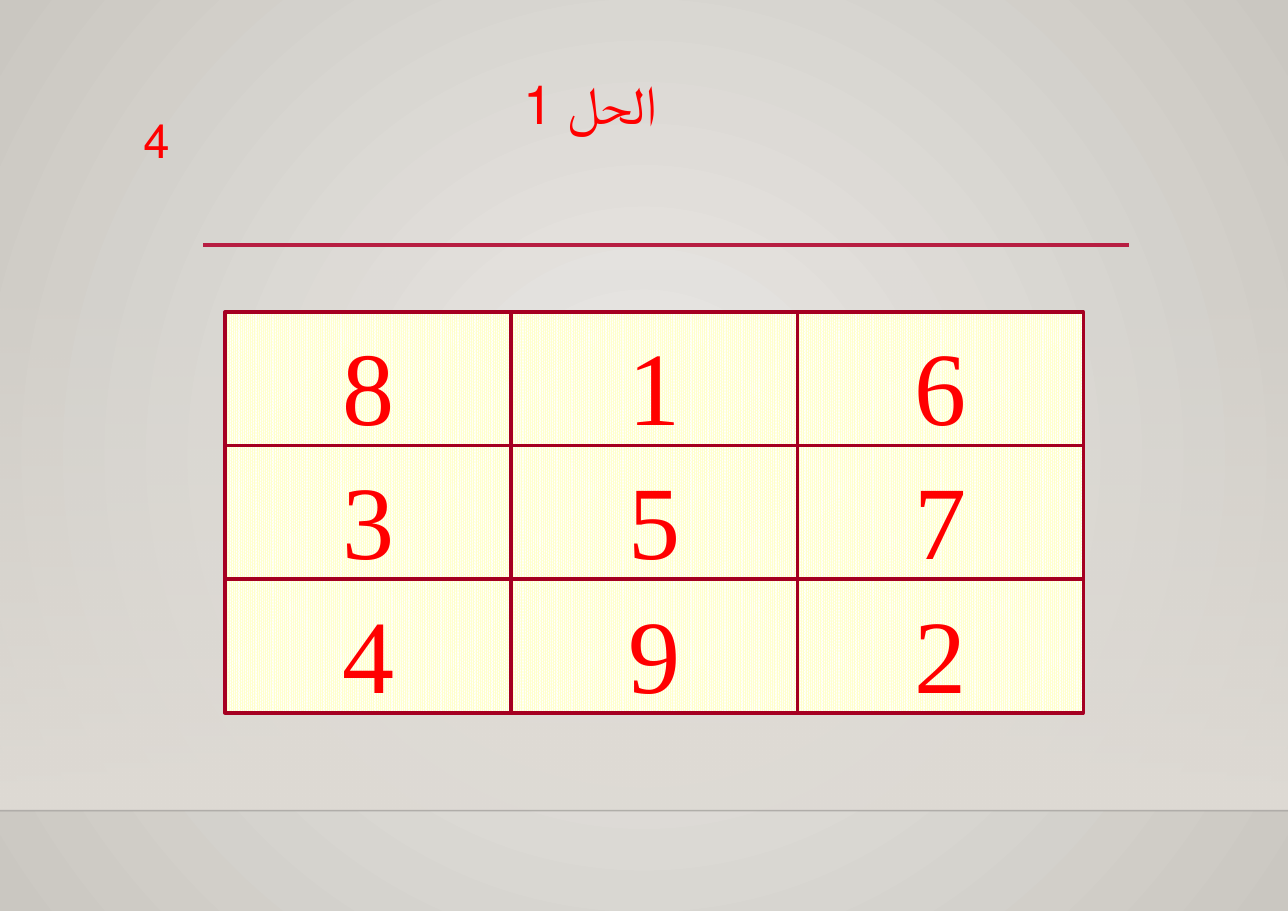
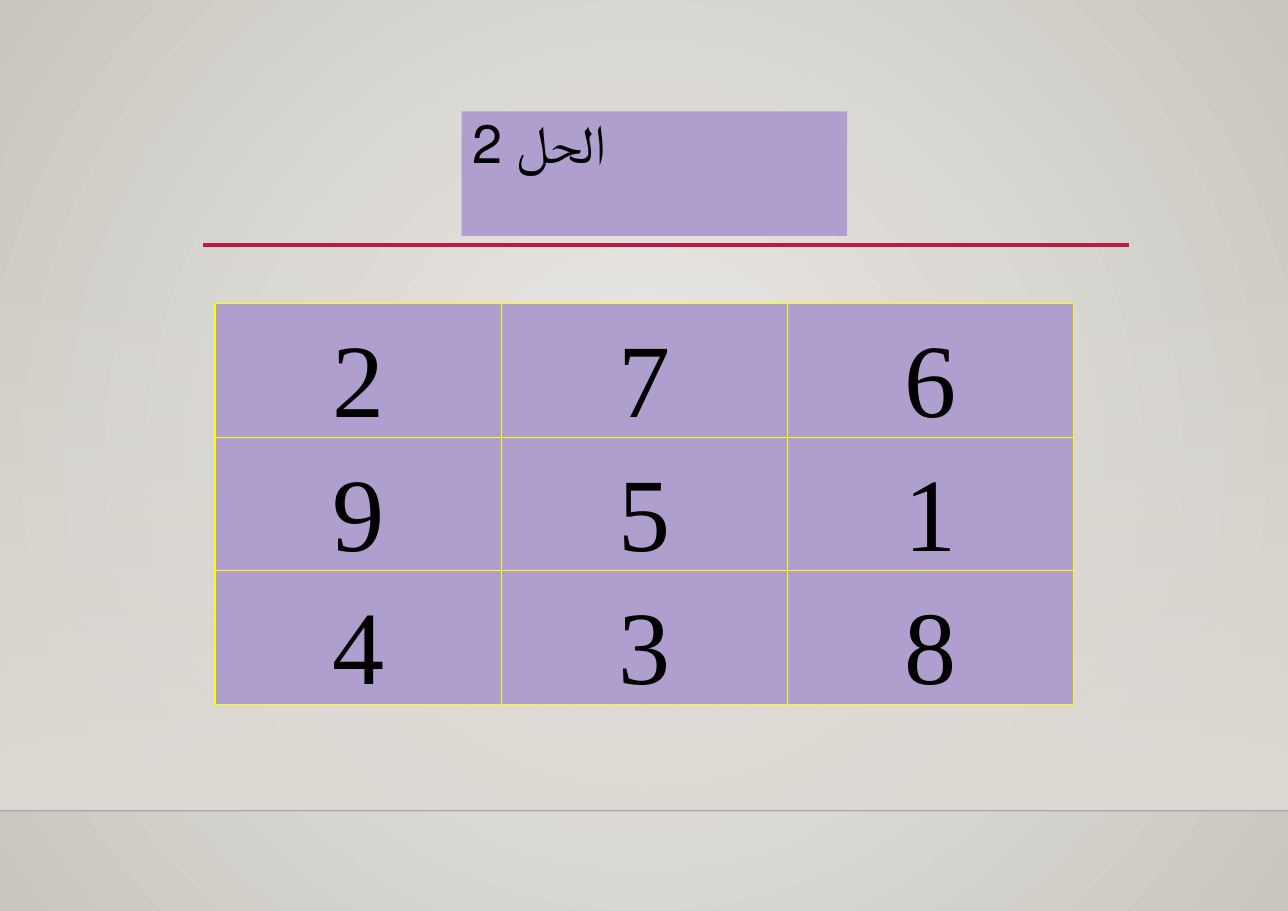
from dataclasses import dataclass
from itertools import product

from pptx import Presentation
from pptx.dml.color import RGBColor as RGB
from pptx.enum.dml import MSO_PATTERN as Pattern
from pptx.enum.shapes import MSO_CONNECTOR as Link, MSO_SHAPE as Kind
from pptx.enum.text import MSO_ANCHOR as Anchor, MSO_AUTO_SIZE as Fit
from pptx.enum.text import PP_ALIGN as Align
from pptx.oxml.ns import qn
from pptx.oxml.xmlchemy import OxmlElement as Node
from pptx.util import Pt


@dataclass(frozen=True)
class Theme:
    wide: float = 841.7
    high: float = 595.4
    glow: str = "ECEAE7"
    edge: str = "CAC7C1"
    band: str = "DFDBD5"
    floor: str = "000001"
    rule: str = "B71E42"
    red: str = "FF0000"
    black: str = "000000"
    cream: str = "FFFFCC"
    white: str = "FFFFFF"
    wine: str = "A50021"
    lilac: str = "AF9FCF"
    yellow: str = "FFFF00"
    sans: str = "Calibri"
    serif: str = "Times New Roman"
    head: float = 35.3
    note: float = 30.9
    digit: float = 68


T = Theme()


def rgb(code):
    return RGB.from_string(code)


def place(shape, left, top, width, height):
    shape.left, shape.top = Pt(left), Pt(top)
    shape.width, shape.height = Pt(width), Pt(height)


def fade(color, share):
    """Set the opacity, in percent, of a colour element."""
    alpha = Node("a:alpha")
    alpha.set("val", str(share * 1000))
    color.append(alpha)


def shade(root, stops, radial=False):
    """Rebuild the gradient in root from (position, colour, opacity) stops."""
    grad = root.find(".//" + qn("a:gradFill"))
    for child in list(grad):
        grad.remove(child)
    steps = Node("a:gsLst")
    for pos, code, share in stops:
        step, color = Node("a:gs"), Node("a:srgbClr")
        step.set("pos", str(pos * 1000))
        color.set("val", code)
        if share < 100:
            fade(color, share)
        step.append(color)
        steps.append(step)
    grad.append(steps)
    if radial:
        way, focus = Node("a:path"), Node("a:fillToRect")
        way.set("path", "circle")
        for side in "ltrb":
            focus.set(side, "50000")
        way.append(focus)
    else:
        way = Node("a:lin")
        way.set("ang", "5400000")
        way.set("scaled", "0")
    grad.append(way)


def write(shape, text, *, size, color, font=T.sans, align=Align.LEFT,
          anchor=Anchor.TOP, rtl=False, space=None, pad=(7.2, 3.6, 7.2, 3.6)):
    """Pad is left, top, right and bottom."""
    frame = shape.text_frame
    frame.word_wrap = True
    frame.auto_size = Fit.NONE
    frame.vertical_anchor = anchor
    (frame.margin_left, frame.margin_top,
     frame.margin_right, frame.margin_bottom) = map(Pt, pad)
    para = frame.paragraphs[0]
    para.alignment = align
    if space:
        para.line_spacing = space
    if rtl:
        para._p.get_or_add_pPr().set("rtl", "1")
    run = para.add_run()
    run.text = text
    run.font.name = font
    run.font.size = Pt(size)
    run.font.color.rgb = rgb(color)


def box(slide, *area):
    shape = slide.shapes.add_shape(Kind.RECTANGLE, *map(Pt, area))
    shape.shadow.inherit = False
    return shape


def line(slide, left, right, y, color, width):
    rule = slide.shapes.add_connector(
        Link.STRAIGHT, Pt(left), Pt(y), Pt(right), Pt(y))
    rule.line.color.rgb = rgb(color)
    rule.line.width = Pt(width)
    rule.element.spPr.append(Node("a:effectLst"))
    return rule


def dress(deck, layout, slide):
    """Give the master its backdrop and the layout its band and lines."""
    master = deck.slide_master
    master.background.fill.gradient()
    shade(master.element, [(0, T.glow, 100), (100, T.edge, 100)], radial=True)
    band = box(slide, 0, 175, T.wide, 354.5)
    band.fill.gradient()
    shade(band.element, [(0, T.band, 0), (100, T.band, 100)])
    band.line.fill.background()
    floor = line(slide, 0, T.wide, 529.8, T.floor, 1)
    fade(floor.element.find(".//" + qn("a:srgbClr")), 20)
    rule = line(slide, 133, 738, 160.3, T.rule, 2.5)
    for shape in (band, floor, rule):
        layout.shapes.element.append(shape.element)


def title(slide, text, area, color):
    head = slide.shapes.title
    place(head, *area)
    write(head, text, size=T.head, color=color, rtl=True, space=0.9)
    return head


def weave(fill):
    fill.patterned()
    fill.pattern = Pattern.PERCENT_90
    fill.fore_color.rgb = rgb(T.cream)
    fill.back_color.rgb = rgb(T.white)


def plain(fill):
    fill.solid()
    fill.fore_color.rgb = rgb(T.lilac)


def square(slide, rows, left, top, paint, edge, width, color):
    """Draw a magic square of three by three boxes."""
    wide, high = 187, 87.3
    for row, col in product(range(3), repeat=2):
        cell = box(slide, left + col * wide, top + row * high, wide, high)
        paint(cell.fill)
        cell.line.color.rgb = rgb(edge)
        cell.line.width = Pt(width)
        write(cell, rows[row][col], size=T.digit, color=color, font=T.serif,
              align=Align.CENTER, anchor=Anchor.MIDDLE, pad=(8, 8, 8, 1))


def main():
    deck = Presentation()
    deck.slide_width, deck.slide_height = Pt(T.wide), Pt(T.high)
    layout = deck.slide_layouts[5]
    first, second = (deck.slides.add_slide(layout) for _ in range(2))
    dress(deck, layout, first)

    title(first, "الحل 1", (335, 47.5, 183.5, 80), T.red)
    mark = first.shapes.add_textbox(*map(Pt, (44.5, 69, 73.5, 44)))
    write(mark, "4", size=T.note, color=T.red, align=Align.RIGHT, rtl=True)
    square(first, ("816", "357", "492"), 147, 204, weave, T.wine, 2.25, T.red)

    head = title(second, "الحل 2", (301.7, 72.7, 252, 81.4), T.black)
    plain(head.fill)
    square(second, ("276", "951", "438"), 140.5, 198.5, plain, T.yellow, 0.75,
           T.black)

    deck.save("out.pptx")


if __name__ == "__main__":
    main()
